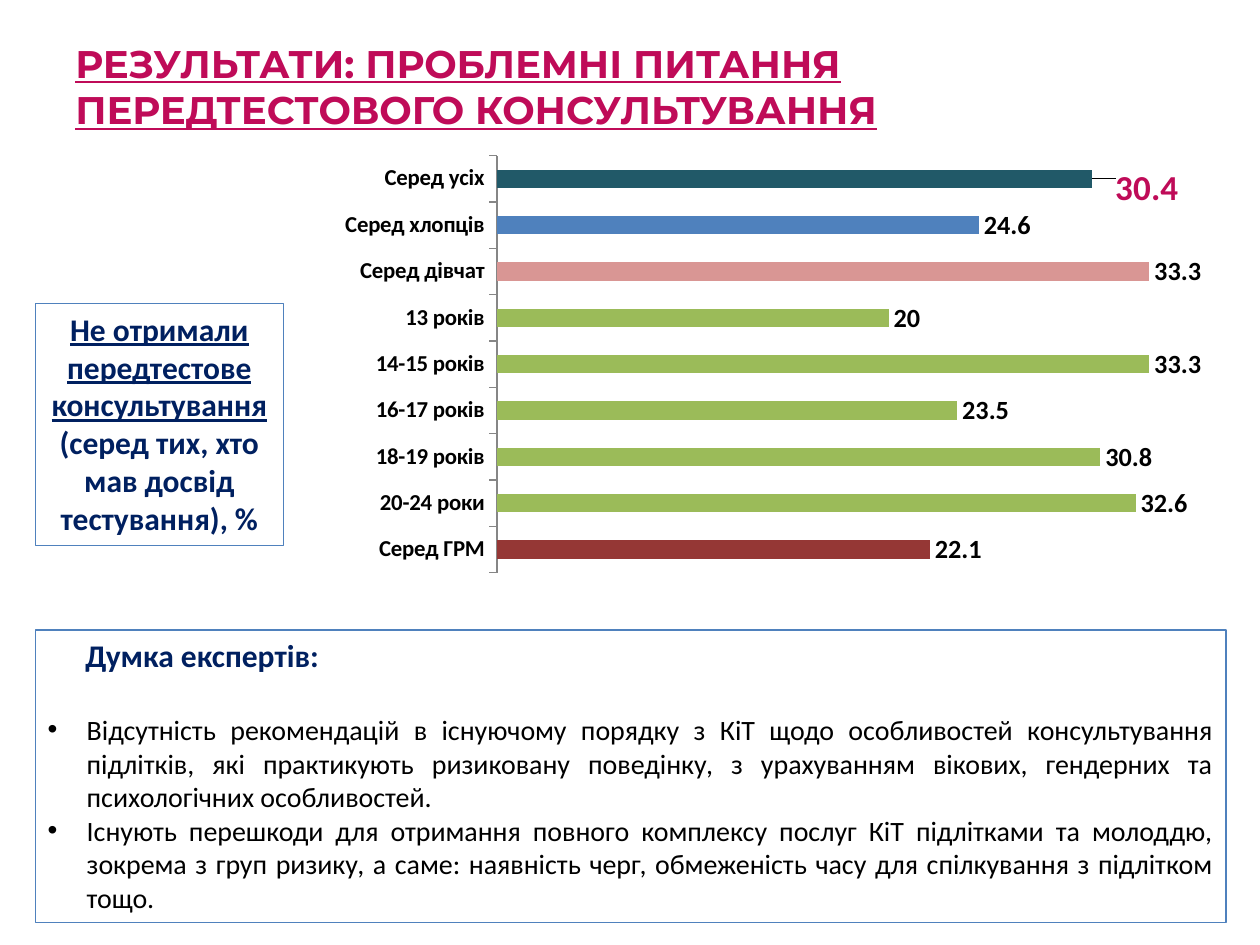
from dataclasses import dataclass

from lxml import etree
from pptx import Presentation
from pptx.chart.data import CategoryChartData
from pptx.dml.color import RGBColor
from pptx.enum.chart import XL_CHART_TYPE, XL_LABEL_POSITION, XL_TICK_LABEL_POSITION, XL_TICK_MARK
from pptx.enum.shapes import MSO_SHAPE
from pptx.enum.text import MSO_ANCHOR, MSO_AUTO_SIZE, PP_ALIGN
from pptx.oxml import parse_xml
from pptx.oxml.ns import nsdecls, qn
from pptx.util import Inches, Pt

BAR_CLUSTERED = XL_CHART_TYPE.BAR_CLUSTERED
OUTSIDE_END = XL_LABEL_POSITION.OUTSIDE_END
LABELS_LOW = XL_TICK_LABEL_POSITION.LOW
TICK_OUTSIDE = XL_TICK_MARK.OUTSIDE
RECTANGLE = MSO_SHAPE.RECTANGLE
TOP, MIDDLE = MSO_ANCHOR.TOP, MSO_ANCHOR.MIDDLE
GROW = MSO_AUTO_SIZE.SHAPE_TO_FIT_TEXT
LEFT, CENTER, JUSTIFY = PP_ALIGN.LEFT, PP_ALIGN.CENTER, PP_ALIGN.JUSTIFY

WIDTH, HEIGHT = Inches(10), Inches(7.5)
COLUMNS, ROWS = 100, 75


@dataclass(frozen=True)
class Theme:
    """Colours, fonts and type sizes of the slide."""
    accent: str = "BF0B58"
    navy: str = "002060"
    black: str = "000000"
    frame: str = "4F81BD"
    axis: str = "868686"
    total: str = "215968"
    boys: str = "4F81BD"
    girls: str = "D99694"
    ages: str = "9BBB59"
    risk_groups: str = "953735"
    title_font: str = "Montserrat"
    body_font: str = "Calibri"
    title_size: int = 22
    heading_size: int = 18
    body_size: int = 16
    category_size: int = 13
    value_size: int = 15
    total_size: int = 20


THEME = Theme()

RESULTS = [
    ("Cеред усіх", 30.4, THEME.total),
    ("Cеред хлопців", 24.6, THEME.boys),
    ("Cеред дівчат", 33.3, THEME.girls),
    ("13 років", 20, THEME.ages),
    ("14-15 років", 33.3, THEME.ages),
    ("16-17 років", 23.5, THEME.ages),
    ("18-19 років", 30.8, THEME.ages),
    ("20-24 роки", 32.6, THEME.ages),
    ("Cеред ГРМ", 22.1, THEME.risk_groups),
]

OPINIONS = [
    "Відсутність рекомендацій в існуючому порядку з КіТ щодо особливостей консультування "
    "підлітків, які практикують ризиковану поведінку, з урахуванням вікових, гендерних та "
    "психологічних особливостей.",
    "Існують перешкоди для отримання повного комплексу послуг КіТ підлітками та молоддю, "
    "зокрема з груп ризику, а саме: наявність черг, обмеженість часу для спілкування з "
    "підлітком тощо.",
]


def grid_box(column, row, columns, rows):
    """Turn grid cells into left, top, width and height."""
    return (int(WIDTH * column / COLUMNS), int(HEIGHT * row / ROWS),
            int(WIDTH * columns / COLUMNS), int(HEIGHT * rows / ROWS))


def style_font(font, size, color, bold=False, underline=False, name=THEME.body_font):
    """Give a font its face, size, colour and emphasis."""
    font.name, font.size = name, Pt(size)
    font.bold, font.underline = bold, underline
    font.color.rgb = RGBColor.from_string(color)


def set_indent(paragraph, margin, indent, bullet=None):
    """Set the left margin, first-line indent and bullet of a paragraph."""
    properties = paragraph._p.get_or_add_pPr()
    properties.set("marL", str(Inches(margin)))
    properties.set("indent", str(Inches(indent)))
    if bullet:
        etree.SubElement(properties, qn("a:buFont")).set("typeface", "Arial")
        etree.SubElement(properties, qn("a:buChar")).set("char", bullet)


def add_frame(slide, box):
    """Add an outlined text panel and return its text frame."""
    shape = slide.shapes.add_shape(RECTANGLE, *box)
    shape.shadow.inherit = False
    shape.fill.background()
    shape.line.color.rgb = RGBColor.from_string(THEME.frame)
    shape.line.width = Pt(0.75)
    text_frame = shape.text_frame
    text_frame.word_wrap = True
    text_frame.auto_size = GROW
    text_frame.vertical_anchor = TOP
    return text_frame


def add_title(slide, box):
    """Place the underlined slide title."""
    text_frame = slide.shapes.add_textbox(*box).text_frame
    text_frame.word_wrap = True
    text_frame.vertical_anchor = MIDDLE
    text_frame.text = "РЕЗУЛЬТАТИ: ПРОБЛЕМНІ ПИТАННЯ ПЕРЕДТЕСТОВОГО КОНСУЛЬТУВАННЯ"
    style_font(text_frame.paragraphs[0].runs[0].font, THEME.title_size, THEME.accent,
               bold=True, underline=True, name=THEME.title_font)


def add_indicator(slide, box):
    """Place the panel that says what the chart measures."""
    paragraph = add_frame(slide, box).paragraphs[0]
    paragraph.alignment = CENTER
    for text, underline in (("Не отримали передтестове консультування ", True),
                            ("(серед тих, хто мав досвід тестування), %", False)):
        run = paragraph.add_run()
        run.text = text
        style_font(run.font, THEME.heading_size, THEME.navy, True, underline)


def add_opinions(slide, box):
    """Place the panel of expert opinions."""
    text_frame = add_frame(slide, box)
    heading = text_frame.paragraphs[0]
    heading.text = "Думка експертів:"
    heading.alignment = LEFT
    heading.space_after = Pt(22)
    set_indent(heading, 0, 0.3)
    style_font(heading.runs[0].font, THEME.heading_size, THEME.navy, bold=True)
    for opinion in OPINIONS:
        paragraph = text_frame.add_paragraph()
        paragraph.text = opinion
        paragraph.alignment = JUSTIFY
        set_indent(paragraph, 0.31, -0.31, "•")
        style_font(paragraph.runs[0].font, THEME.body_size, THEME.black)


def manual_layout(target=None, **shares):
    """Build a chart layout from shares of the chart's size."""
    values = {"layoutTarget": target} if target else {}
    values.update({"xMode": "edge", "yMode": "edge"} if target else {})
    values.update(shares)
    items = "".join(f'<c:{name} val="{value}"/>' for name, value in values.items())
    return parse_xml(f'<c:layout {nsdecls("c")}><c:manualLayout>{items}'
                     '</c:manualLayout></c:layout>')


def add_results_chart(slide, box):
    """Place the bar chart of shares by group."""
    data = CategoryChartData()
    data.categories = [name for name, _, _ in RESULTS]
    data.add_series("Series 1", [value for _, value, _ in RESULTS])
    chart = slide.shapes.add_chart(BAR_CLUSTERED, *box, data).chart
    chart.has_legend = chart.has_title = False
    style_font(chart.font, 10, THEME.black)

    groups = chart.category_axis
    groups.reverse_order = True
    groups.major_tick_mark = TICK_OUTSIDE
    groups.tick_label_position = LABELS_LOW
    groups.format.line.color.rgb = RGBColor.from_string(THEME.axis)
    style_font(groups.tick_labels.font, THEME.category_size, THEME.black, bold=True)
    scale = chart.value_axis
    scale.visible = scale.has_major_gridlines = False
    scale.minimum_scale, scale.maximum_scale = 0, 35

    plot = chart.plots[0]
    plot.gap_width = 150
    plot.vary_by_categories = False
    series = plot.series[0]
    for index, (_, _, color) in enumerate(RESULTS):
        fill = series.points[index].format.fill
        fill.solid()
        fill.fore_color.rgb = RGBColor.from_string(color)
    labels = series.data_labels
    labels.show_value = True
    labels.position = OUTSIDE_END
    style_font(labels.font, THEME.value_size, THEME.black, bold=True)

    total = series.points[0].data_label
    style_font(total.font, THEME.total_size, THEME.accent, bold=True)
    total.position = OUTSIDE_END
    label_index = series._element.find(".//" + qn("c:dLbl")).find(qn("c:idx"))
    label_index.addnext(manual_layout(x=0.02, y=0.02))

    plot_area = chart._chartSpace.chart.plotArea
    for layout in plot_area.findall(qn("c:layout")):
        plot_area.remove(layout)
    plot_area.insert(0, manual_layout("inner", x=0.196, y=0, w=0.771, h=0.916))


def main():
    """Build and save the slide."""
    presentation = Presentation()
    presentation.slide_width, presentation.slide_height = WIDTH, HEIGHT
    slide = presentation.slides.add_slide(presentation.slide_layouts[6])
    add_title(slide, grid_box(5, 3, 90, 7.7))
    add_indicator(slide, grid_box(2.8, 24.1, 19.7, 19.2))
    add_opinions(slide, grid_box(2.8, 50, 94.5, 23.2))
    add_results_chart(slide, grid_box(25.6, 12.3, 70.6, 36.2))
    presentation.save("out.pptx")


if __name__ == "__main__":
    main()
